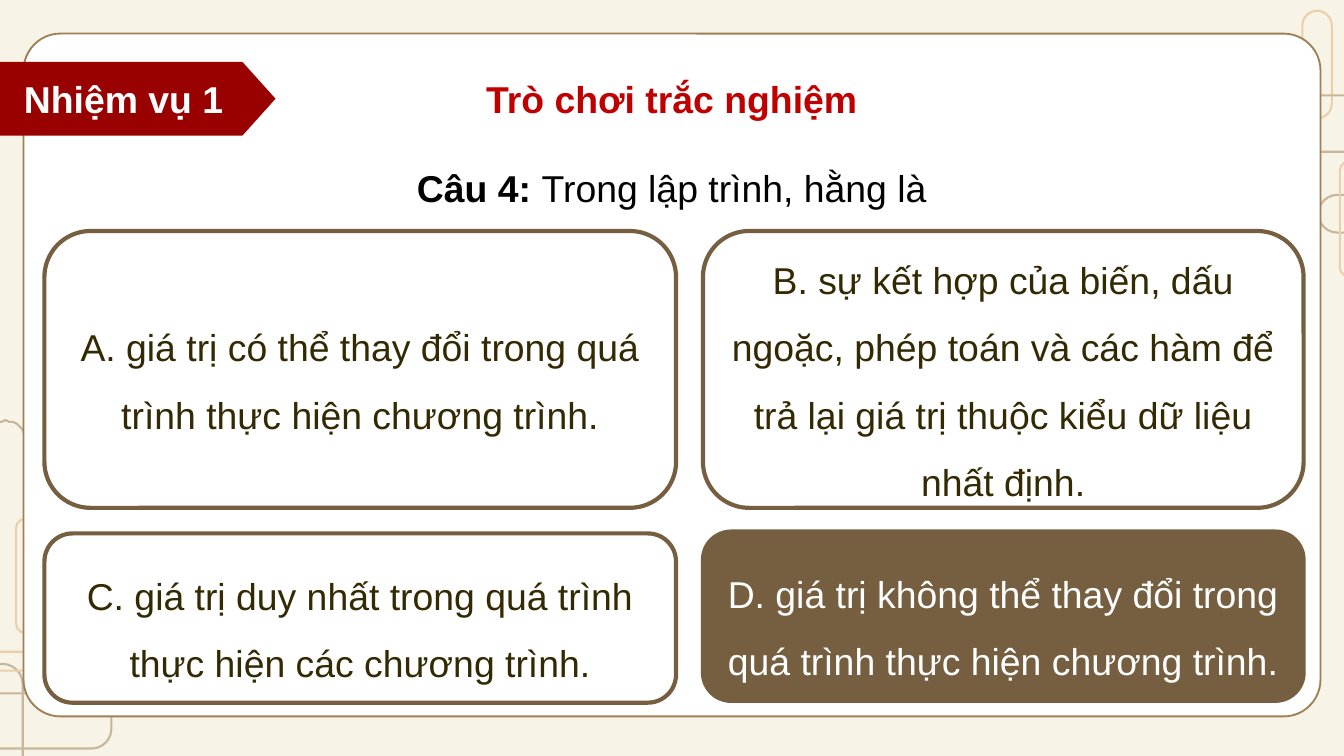
"""Build a quiz slide with four answer cards, the right one marked."""
from math import cos, pi, sin

from lxml import etree
from pptx import Presentation
from pptx.dml.color import RGBColor
from pptx.enum.shapes import MSO_SHAPE
from pptx.enum.text import MSO_ANCHOR, PP_ALIGN
from pptx.oxml.ns import qn
from pptx.util import Pt

RECT, ROUND, ARROW = MSO_SHAPE.RECTANGLE, MSO_SHAPE.ROUNDED_RECTANGLE, MSO_SHAPE.PENTAGON
MIDDLE, TOP = MSO_ANCHOR.MIDDLE, MSO_ANCHOR.TOP
LEFT, CENTER = PP_ALIGN.LEFT, PP_ALIGN.CENTER

THEME = {
    "font": "Arial", "size": 20, "back": "F7F4E7", "white": "FFFFFF",
    "tan": "9E7F56", "peach": "E2AE74", "brown": "765F40", "red": "990000",
    "title": "C00000", "ink": "332A03", "black": "000000",
}
WIDE, HIGH = 720, 405

TITLE = "Trò chơi trắc nghiệm"
TASK = "Nhiệm vụ 1"
ASK = ("Câu 4: ", "Trong lập trình, hằng là")
CARDS = [
    "A. giá trị có thể thay đổi trong quá trình thực hiện chương trình.",
    "B. sự kết hợp của biến, dấu ngoặc, phép toán và các hàm để trả lại giá trị "
    "thuộc kiểu dữ liệu nhất định.",
    "C. giá trị duy nhất trong quá trình thực hiện các chương trình.",
    "D. giá trị không thể thay đổi trong quá trình thực hiện chương trình.",
]
RIGHT = 3
COLS = [(23.8, 338.4), (376.6, 321.8)]
ROWS = [(123.8, 148.3), (285.8, 90.7)]

PILLS = [
    ((706.3, 104.4, 77.4, 20.2), "tan", 0.5),
    ((717.8, 86.4, 10.1, 61.9), "peach", 0.5),
    ((697.7, 5.8, 15.8, 57.6), "peach", 0.5),
    ((689, 51.1, 90.7, 30.2), "tan", 0.36),
    ((-31, 371.5, 90.7, 29.5), "tan", 0.36),
    ((-9.4, 355.7, 21.6, 97.9), "tan", 0.5),
    ((-29.5, 349.2, 61.9, 10.1), "peach", 0.5),
    ((8.6, 277.9, 10.1, 61.2), "peach", 0.5),
]
ARCH = {"mid": 2.9, "top": 225.4, "rad": 10.8, "left": 309.6, "right": 277.9}


def tint(name):
    return RGBColor.from_string(THEME[name])


def paint(shape, fill=None, line=None, width=1):
    shape.shadow.inherit = False
    if fill:
        shape.fill.solid()
        shape.fill.fore_color.rgb = tint(fill)
    else:
        shape.fill.background()
    if line:
        shape.line.color.rgb = tint(line)
        shape.line.width = Pt(width)
    else:
        shape.line.fill.background()
    return shape


def draw(slide, kind, box, adj=None, **look):
    shape = slide.shapes.add_shape(kind, *map(Pt, box))
    if adj is not None:
        shape.adjustments[0] = adj
    return paint(shape, **look)


def write(shape, runs, align=CENTER, space=None, **frame):
    body = shape.text_frame
    for key, value in {"word_wrap": True, "vertical_anchor": MIDDLE, **frame}.items():
        setattr(body, key, value)
    para = body.paragraphs[0]
    para.alignment = align
    if space:
        para.line_spacing = space
    for text, color, bold in runs:
        run = para.add_run()
        run.text = text
        look = {"name": THEME["font"], "size": Pt(THEME["size"]), "bold": bold}
        for key, value in look.items():
            setattr(run.font, key, value)
        run.font.color.rgb = tint(color)


def label(slide, top, high, runs, **form):
    box = slide.shapes.add_textbox(0, Pt(top), Pt(WIDE), Pt(high))
    write(box, runs, vertical_anchor=TOP, **form)


def arch(slide):
    mid, rad = ARCH["mid"], ARCH["rad"]
    turns = [pi - pi * step / 16 for step in range(17)]
    curve = [(mid + rad * cos(a), ARCH["top"] + rad * (1 - sin(a))) for a in turns]
    path = slide.shapes.build_freeform(mid - rad, ARCH["left"], scale=Pt(1))
    path.add_line_segments(curve + [(mid + rad, ARCH["right"])], close=False)
    paint(path.convert_to_shape(), line="tan", width=1.12)


def decor(slide):
    for box, color, adj in PILLS:
        draw(slide, ROUND, box, adj, line=color, width=1.12)
    arch(slide)
    veil = draw(slide, RECT, (0, 0, WIDE, HIGH), fill="back")
    color = veil.fill._xPr.find(qn("a:solidFill"))[0]
    etree.SubElement(color, qn("a:alpha")).set("val", "47000")


def main():
    deck = Presentation()
    deck.slide_width, deck.slide_height = Pt(WIDE), Pt(HIGH)
    slide = deck.slides.add_slide(deck.slide_layouts[6])
    slide.background.fill.solid()
    slide.background.fill.fore_color.rgb = tint("back")
    decor(slide)
    draw(slide, ROUND, (12.6, 18, 694.8, 365.8), 0.054, fill="white", line="tan")
    label(slide, 37.4, 31.7, [(TITLE, "title", True)])
    flag = draw(slide, ARROW, (0, 33.1, 147.6, 39.6), 0.449, fill="red")
    write(flag, [(TASK, "white", True)], LEFT, margin_left=Pt(12.8))
    label(slide, 72.7, 38.9, [(ASK[0], "black", True), (ASK[1], "black", False)], space=1.5)
    for num, text in enumerate(CARDS):
        (left, wide), (top, high) = COLS[num % 2], ROWS[num // 2]
        hit = num == RIGHT
        card = draw(slide, ROUND, (left, top - hit, wide, high),
                    fill="brown" if hit else "white", line="brown", width=2.25)
        write(card, [(text, "white" if hit else "ink", False)], space=1.5)
    deck.save("out.pptx")


if __name__ == "__main__":
    main()
